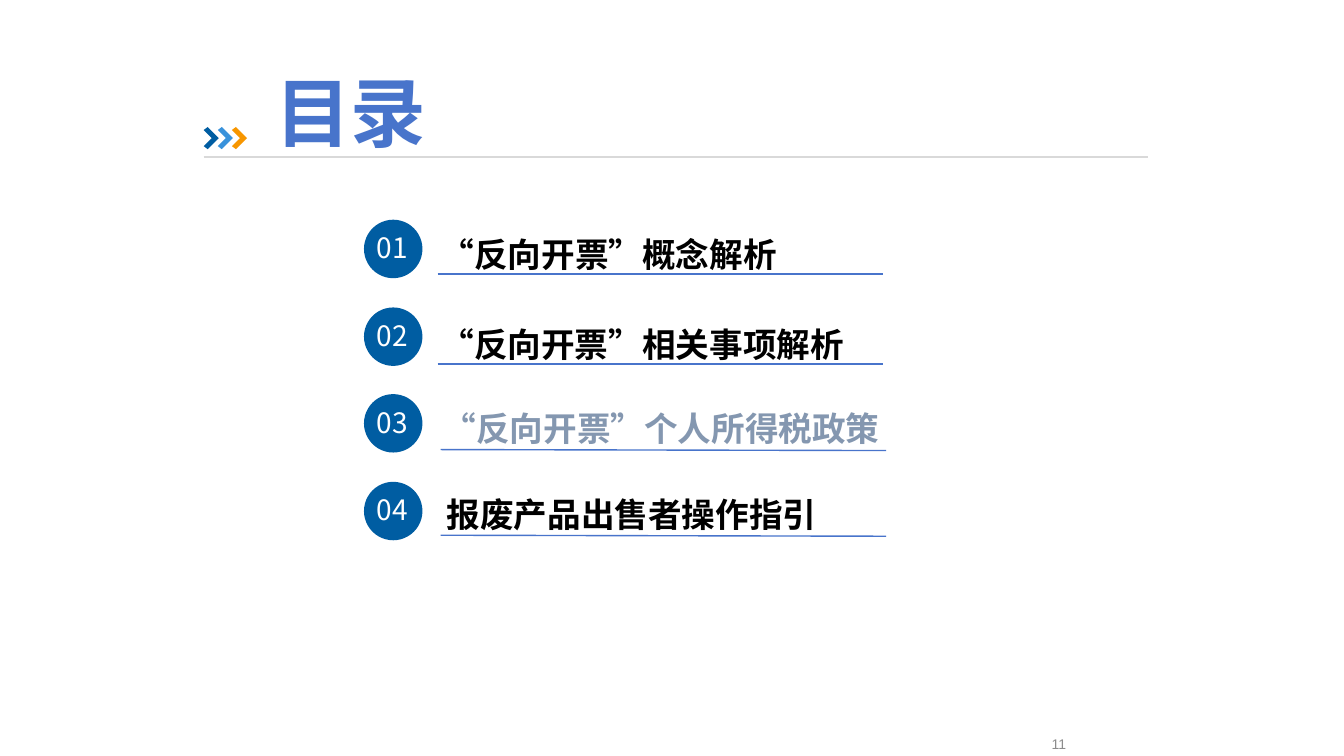
from dataclasses import dataclass

from lxml import etree
from pptx import Presentation
from pptx import util as u
from pptx.dml.color import RGBColor
from pptx.enum import shapes, text
from pptx.oxml.ns import qn

PX = 9144  # EMU per px, 100 px to the inch
SANS = "Noto Sans CJK SC"
NAVY, BLUE, BLACK = "005DA2", "4874CB", "000000"


@dataclass
class Item:
    label: str
    left: int
    top: int
    width: int
    rule: tuple[int, int, int, int]
    font: str = SANS
    color: str = BLACK


ITEMS = [
    Item("“反向开票”概念解析", 430, 228, 361, (434, 272, 876, 272)),
    Item("“反向开票”相关事项解析", 430, 317, 464, (434, 361, 876, 361), "Arial"),
    Item("“反向开票”个人所得税政策", 432, 401, 473, (437, 446, 879, 447),
         "Arial", "8497B0"),
    Item("报废产品出售者操作指引", 436, 486, 440, (437, 531, 879, 532)),
]
CHEVRONS = [NAVY, "3992DB", "F79600"]


def px(n: int) -> u.Emu:
    return u.Emu(n * PX)


def rgb(color: str) -> RGBColor:
    return RGBColor.from_string(color)


def paint(shape, color: str) -> None:
    shape.shadow.inherit = False
    shape.fill.solid()
    shape.fill.fore_color.rgb = rgb(color)
    shape.line.fill.background()


def place(shape, left: int, top: int, width: int, height: int) -> None:
    shape.left, shape.top = px(left), px(top)
    shape.width, shape.height = px(width), px(height)


def write(shape, words: str, size: int, color: str, font: str = SANS,
          bold: bool = False, align=text.PP_ALIGN.LEFT,
          anchor=text.MSO_ANCHOR.TOP, pad: tuple[int, int] = (10, 5),
          wrap: bool = True) -> None:
    frame = shape.text_frame
    frame.word_wrap = wrap
    frame.vertical_anchor = anchor
    frame.margin_left = frame.margin_right = px(pad[0])
    frame.margin_top = frame.margin_bottom = px(pad[1])
    para = frame.paragraphs[0]
    para.alignment = align
    run = para.add_run()
    run.text = words
    run.font.size = u.Pt(size)
    run.font.bold = bold
    run.font.name = font
    run.font.color.rgb = rgb(color)
    east = etree.SubElement(run.font._element, qn("a:ea"))
    east.set("typeface", SANS)


def box(slide, left: int, top: int, width: int, height: int):
    return slide.shapes.add_textbox(px(left), px(top), px(width), px(height))


def rule(slide, ends: tuple[int, int, int, int], color: str, weight: float) -> None:
    line = slide.shapes.add_connector(
        shapes.MSO_CONNECTOR.STRAIGHT, *(px(n) for n in ends))
    line.line.color.rgb = rgb(color)
    line.line.width = u.Pt(weight)
    etree.SubElement(line._element.spPr, qn("a:effectLst"))


def chevron(slide, left: int, top: int, color: str) -> None:
    pen = slide.shapes.build_freeform(left, top + 3, scale=PX)
    tips = [(4, 0), (15, 11), (4, 22), (0, 19), (8, 11)]
    pen.add_line_segments([(left + x, top + y) for x, y in tips], close=True)
    paint(pen.convert_to_shape(), color)


def entry(slide, i: int, item: Item) -> None:
    top = 218 + round(i * 86.7)
    disc = slide.shapes.add_shape(
        shapes.MSO_SHAPE.OVAL, px(361), px(top), px(58), px(58))
    paint(disc, NAVY)
    write(box(slide, 364, top + 6, 53, 44), f"{i + 1:02}", 20, "FFFFFF", wrap=False)
    rule(slide, item.rule, BLUE, 1)
    write(box(slide, item.left, item.top, item.width, 48), item.label, 24,
          item.color, item.font, bold=True, pad=(7, 4))


def main() -> None:
    deck = Presentation()
    deck.slide_width, deck.slide_height = px(1333), px(750)
    slide = deck.slides.add_slide(deck.slide_layouts[5])
    for i, color in enumerate(CHEVRONS):
        chevron(slide, 202 + 14 * i, 126, color)
    rule(slide, (202, 156, 1139, 156), "D9D9D9", 1.5)
    title = slide.shapes.title
    place(title, 218, 60, 260, 101)
    write(title, "目录", 54, BLUE, bold=True, align=text.PP_ALIGN.CENTER)
    for i, item in enumerate(ITEMS):
        entry(slide, i, item)
    write(box(slide, 1043, 726, 40, 24), "11", 10, "8C8C8C", "Arial",
          anchor=text.MSO_ANCHOR.MIDDLE, pad=(0, 0))
    deck.save("out.pptx")


if __name__ == "__main__":
    main()
